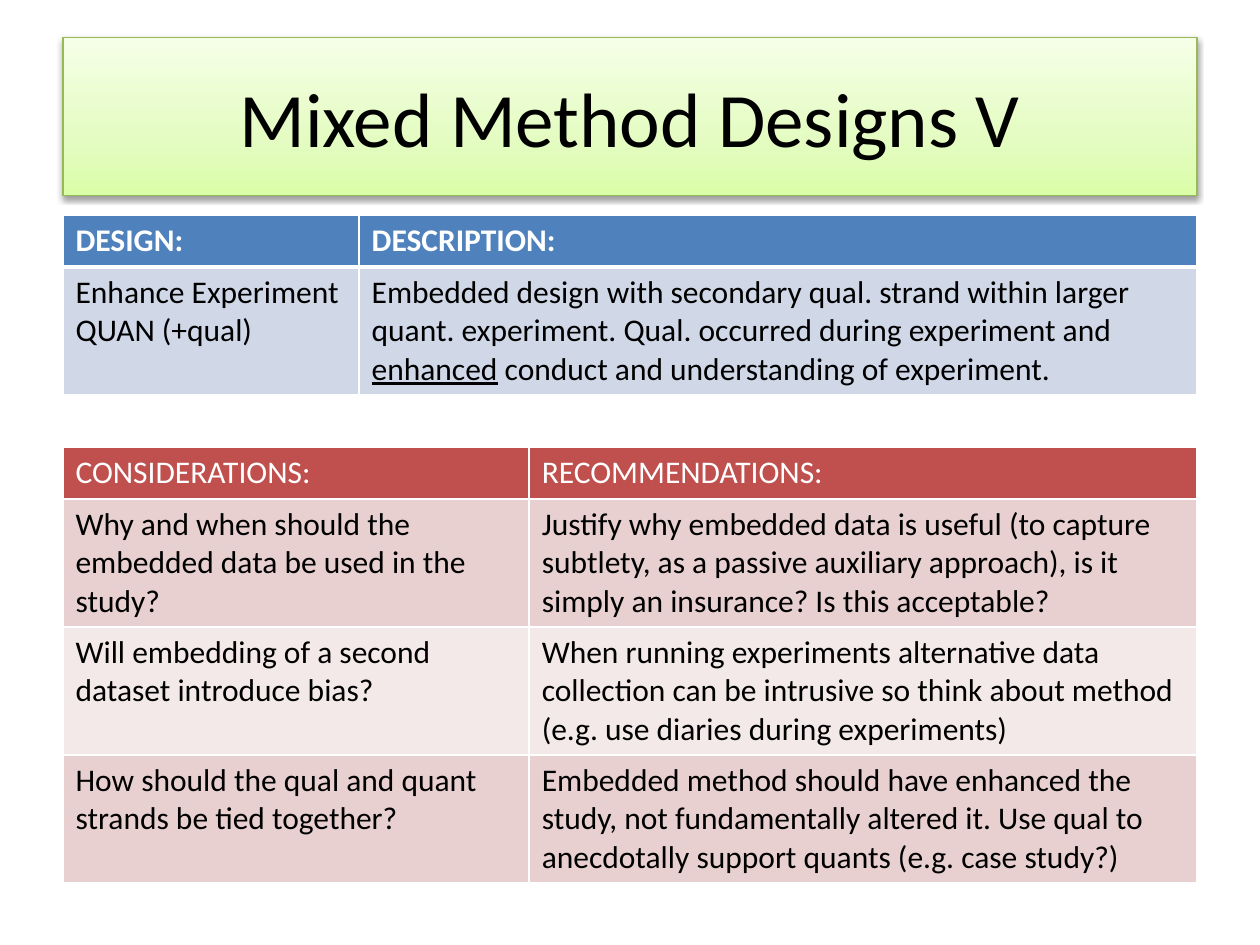
from copy import deepcopy

from lxml import etree
from pptx import Presentation
from pptx.dml.color import RGBColor
from pptx.enum.text import MSO_ANCHOR, PP_ALIGN
from pptx.oxml import parse_xml
from pptx.oxml.ns import nsdecls, qn
from pptx.util import Inches, Pt

CENTER = PP_ALIGN.CENTER
MIDDLE = MSO_ANCHOR.MIDDLE
TITLE_ONLY = 5
FONT = "Calibri"
COLORS = {
    "ink": "000000", "white": "FFFFFF", "title_line": "98B955",
    "title_low": "DAFDA7", "title_mid": "E4FCC2", "title_high": "F5FFE7",
    "blue": "4F81BD", "blue_band": "D0D8E8",
    "red": "C0504D", "red_band": "E8D0D0", "red_pale": "F4E9E9",
}
TITLE_GRADIENT = [(0, "title_low"), (0.35, "title_mid"), (1, "title_high")]

DESIGN = [
    ("DESIGN:", "DESCRIPTION:"),
    ("Enhance Experiment\nQUAN (+qual)",
     "Embedded design with secondary qual. strand within larger quant. experiment. "
     "Qual. occurred during experiment and _enhanced_ conduct and understanding of experiment."),
]
ADVICE = [
    ("CONSIDERATIONS:", "RECOMMENDATIONS:"),
    ("Why and when should the embedded data be used in the study?",
     "Justify why embedded data is useful (to capture subtlety, as a passive auxiliary "
     "approach), is it simply an insurance? Is this acceptable?"),
    ("Will embedding of a second dataset introduce bias?",
     "When running experiments alternative data collection can be intrusive so think about "
     "method (e.g. use diaries during experiments)"),
    ("How should the qual and quant strands be tied together?",
     "Embedded method should have enhanced the study, not fundamentally altered it. "
     "Use qual to anecdotally support quants (e.g. case study?)"),
]


def rgb(name):
    return RGBColor.from_string(COLORS[name])


class Deck:
    unit = Inches(0.5)
    left, columns = 1, 18
    header_rows, body_rows = 0.82, 2.03

    def __init__(self):
        self.prs = Presentation()
        self.prs.slide_width, self.prs.slide_height = self.span(20), self.span(15)
        self.slide = self.prs.slides.add_slide(self.prs.slide_layouts[TITLE_ONLY])

    def span(self, units):
        return int(units * self.unit)

    def title(self, text, top, rows):
        title = self.slide.shapes.title
        title.left, title.top = self.span(self.left), self.span(top)
        title.width, title.height = self.span(self.columns), self.span(rows)
        title.text_frame.text = text
        title.text_frame.vertical_anchor = MIDDLE
        heading = title.text_frame.paragraphs[0]
        heading.alignment = CENTER
        heading.font.name, heading.font.size = FONT, Pt(44)
        heading.font.color.rgb = rgb("ink")
        title.fill.gradient()
        title.fill.gradient_angle = 90
        stop_list = title.element.spPr.find(".//" + qn("a:gsLst"))
        stop_list.insert(1, deepcopy(stop_list[0]))
        for stop, (position, color) in zip(title.fill.gradient_stops, TITLE_GRADIENT):
            stop.position, stop.color.rgb = position, rgb(color)
        title.line.color.rgb, title.line.width = rgb("title_line"), Pt(0.75)
        title.element.spPr.append(parse_xml(
            f'<a:effectLst {nsdecls("a")}><a:outerShdw blurRad="{Pt(3.1)}" dist="{Pt(1.6)}" '
            f'dir="5400000" rotWithShape="0"><a:srgbClr val="{COLORS["ink"]}">'
            '<a:alpha val="38000"/></a:srgbClr></a:outerShdw></a:effectLst>'))

    def table(self, content, top, widths, header, bands, bold=False, rule=1):
        heights = [self.header_rows] + [self.body_rows] * (len(content) - 1)
        table = self.slide.shapes.add_table(
            len(content), len(widths), self.span(self.left), self.span(top),
            self.span(self.columns), self.span(sum(heights))).table
        for column, width in zip(table.columns, widths):
            column.width = self.span(width)
        for r, texts in enumerate(content):
            table.rows[r].height = self.span(heights[r])
            fill = bands[(r - 1) % len(bands)] if r else header
            edges = {"L": 1, "R": 1, "T": rule if r == 1 else 1, "B": 1 if r else rule}
            for c, text in enumerate(texts):
                cell = table.cell(r, c)
                cell.fill.solid()
                cell.fill.fore_color.rgb = rgb(fill)
                self.borders(cell, edges)
                self.cell_text(cell, text, "ink" if r else "white", bold and r == 0)

    def borders(self, cell, edges):
        properties = cell._tc.get_or_add_tcPr()
        for index, (side, width) in enumerate(edges.items()):
            line = etree.Element(qn(f"a:ln{side}"), w=str(Pt(width)))
            paint = etree.SubElement(line, qn("a:solidFill"))
            etree.SubElement(paint, qn("a:srgbClr"), val=COLORS["white"])
            properties.insert(index, line)

    def cell_text(self, cell, text, color, bold):
        cell.text_frame.text = text
        for paragraph, words in zip(cell.text_frame.paragraphs, text.split("\n")):
            paragraph.clear()
            for part, piece in enumerate(words.split("_")):
                run = paragraph.add_run()
                run.text = piece
                run.font.name, run.font.size = FONT, Pt(18)
                run.font.bold = bold
                run.font.color.rgb = rgb(color)
                if part % 2:
                    run.font.underline = True


def main():
    deck = Deck()
    deck.title("Mixed Method Designs V", top=0.6, rows=2.5)
    deck.table(DESIGN, 3.42, (4.7, 13.3), "blue", ["blue_band"], bold=True, rule=3)
    deck.table(ADVICE, 7.1, (7.4, 10.6), "red", ["red_band", "red_pale"])
    deck.prs.save("out.pptx")


if __name__ == "__main__":
    main()
